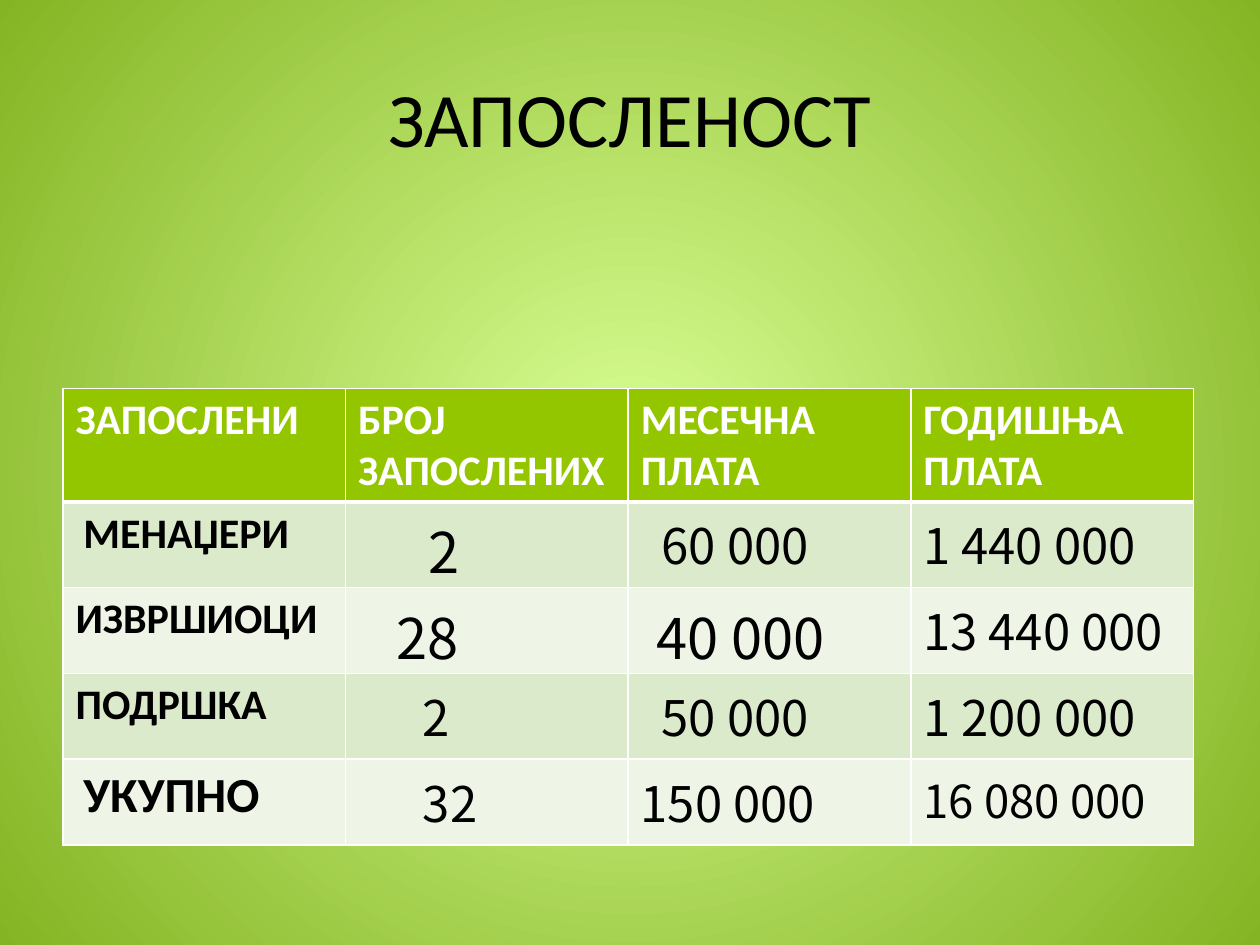
from dataclasses import dataclass

from lxml.etree import SubElement
from pptx import Presentation
from pptx.dml.color import RGBColor as RGB
from pptx.enum.text import MSO_ANCHOR as Anchor, PP_ALIGN as Align
from pptx.oxml import parse_xml
from pptx.oxml.ns import nsdecls, qn
from pptx.util import Pt


@dataclass(frozen=True)
class Theme:
    heading_font: str = "Calibri"
    number_font: str = "Noto Sans CJK KR"
    glow: str = "D9FF95"
    edge: str = "84B423"
    header: str = "94C600"
    bands: tuple[str, str] = ("DCEACC", "EEF5E7")
    white: str = "FFFFFF"
    black: str = "000000"
    title: float = 44
    label: float = 24
    total: float = 26
    number: float = 28
    large: float = 32


@dataclass(frozen=True)
class Entry:
    text: str
    size: float
    indent: float = 0


THEME = Theme()
HEADERS = ("ЗАПОСЛЕНИ", "БРОЈ ЗАПОСЛЕНИХ", "МЕСЕЧНА ПЛАТА", "ГОДИШЊА ПЛАТА")
ROWS = (
    (Entry("МЕНАЏЕРИ", THEME.label, 4.5), Entry("2", THEME.large, 40),
     Entry("60 000", THEME.number, 12), Entry("1 440 000", THEME.number)),
    (Entry("ИЗВРШИОЦИ", THEME.label), Entry("28", THEME.large, 22),
     Entry("40 000", THEME.large, 9), Entry("13 440 000", THEME.number)),
    (Entry("ПОДРШКА", THEME.label), Entry("2", THEME.number, 37),
     Entry("50 000", THEME.number, 12), Entry("1 200 000", THEME.number)),
    (Entry("УКУПНО", THEME.number, 4.5), Entry("32", THEME.number, 37),
     Entry("150 000", THEME.number), Entry("16 080 000", THEME.total)),
)


def write(tf, text: str, *, size: float, font: str = THEME.heading_font,
          color: str = THEME.black, bold: bool = False,
          align=Align.LEFT, indent: float = 0) -> None:
    p = tf.paragraphs[0]
    p.alignment = align
    if indent:
        p_pr = p._p.get_or_add_pPr()
        p_pr.set("marL", str(Pt(indent)))
        p_pr.set("indent", "0")
    r = p.add_run()
    r.text = text
    r.font.name, r.font.size, r.font.bold = font, Pt(size), bold
    r.font.color.rgb = RGB.from_string(color)


def paint_background(s) -> None:
    fill = s.background.fill
    fill.gradient()
    for stop, color in zip(fill.gradient_stops, (THEME.glow, THEME.edge)):
        stop.color.rgb = RGB.from_string(color)
    grad = s.element.find(".//" + qn("a:gradFill"))
    grad.replace(grad.find(qn("a:lin")), parse_xml(
        f'<a:path {nsdecls("a")} path="circle">'
        '<a:fillToRect l="50000" t="50000" r="50000" b="50000"/></a:path>'))


def style_cell(cell, fill: str, *, top: float = 1, bottom: float = 1) -> None:
    tc_pr = cell._tc.get_or_add_tcPr()
    for side, width in (("L", 1), ("R", 1), ("T", top), ("B", bottom)):
        ln = SubElement(tc_pr, qn(f"a:ln{side}"), w=str(Pt(width)))
        solid = SubElement(ln, qn("a:solidFill"))
        SubElement(solid, qn("a:srgbClr"), val=THEME.white)
    cell.fill.solid()
    cell.fill.fore_color.rgb = RGB.from_string(fill)


def add_title(s, text: str) -> None:
    tf = s.shapes.add_textbox(Pt(36), Pt(21.6), Pt(648), Pt(90)).text_frame
    tf.word_wrap = True
    tf.vertical_anchor = Anchor.MIDDLE
    write(tf, text, size=THEME.title, align=Align.CENTER)


def add_staff_table(s) -> None:
    header_height, row_height, col_width = 55.4, 49, 161.5
    table = s.shapes.add_table(
        len(ROWS) + 1, len(HEADERS), Pt(36), Pt(222),
        Pt(col_width * len(HEADERS)),
        Pt(header_height + row_height * len(ROWS))).table
    for col in table.columns:
        col.width = Pt(col_width)
    for i, row in enumerate(table.rows):
        row.height = Pt(row_height if i else header_height)

    for c, text in enumerate(HEADERS):
        cell = table.cell(0, c)
        style_cell(cell, THEME.header, bottom=3)
        write(cell.text_frame, text, size=THEME.label, color=THEME.white, bold=True)
    for r, entries in enumerate(ROWS):
        for c, entry in enumerate(entries):
            cell = table.cell(r + 1, c)
            style_cell(cell, THEME.bands[r % 2], top=1 if r else 3)
            write(cell.text_frame, entry.text, size=entry.size, indent=entry.indent,
                  font=THEME.number_font if c else THEME.heading_font, bold=c == 0)


def main() -> None:
    prs = Presentation()
    prs.slide_width, prs.slide_height = Pt(720), Pt(540)
    s = prs.slides.add_slide(prs.slide_layouts[6])
    paint_background(s)
    add_title(s, "ЗАПОСЛЕНОСТ")
    add_staff_table(s)
    prs.save("out.pptx")


if __name__ == "__main__":
    main()
